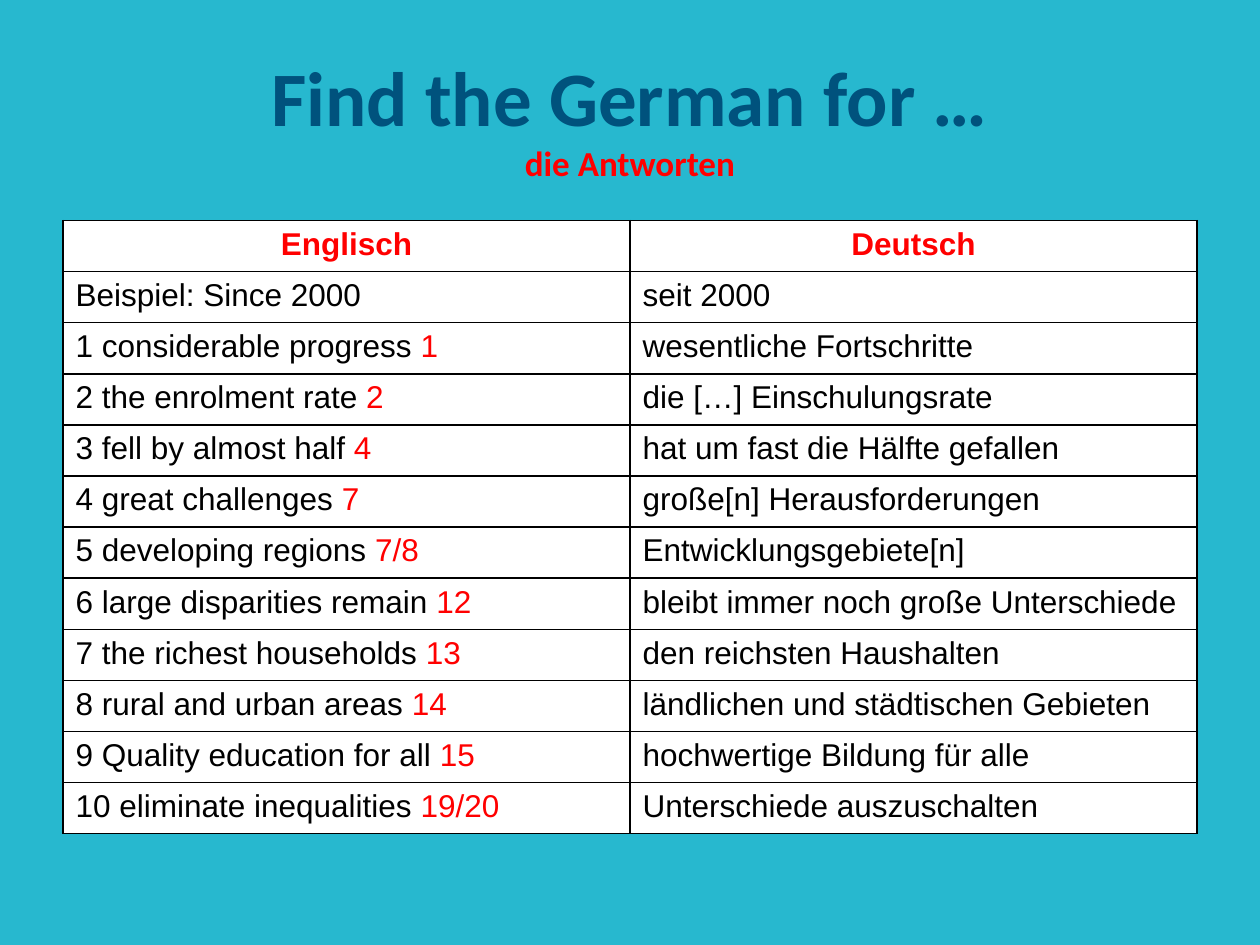
"""Build a vocabulary answer slide with English phrases and their German equivalents."""
import dataclasses

import lxml.etree
import pptx
import pptx.dml.color
import pptx.enum.text
import pptx.oxml.ns
import pptx.util

Inches = pptx.util.Inches
Pt = pptx.util.Pt
CENTER = pptx.enum.text.PP_ALIGN.CENTER
MIDDLE = pptx.enum.text.MSO_ANCHOR.MIDDLE

COLORS = {
    "background": "27B8CF",
    "title": "00527D",
    "answer": "FF0000",
    "text": "000000",
    "border": "000000",
    "cell": "FFFFFF",
}


@dataclasses.dataclass(frozen=True)
class Entry:
    """One phrase pair with the text line where the answer is found."""

    english: str
    german: str
    line: str = ""


HEADINGS = ("Englisch", "Deutsch")
ENTRIES = [
    Entry("Beispiel: Since 2000", "seit 2000"),
    Entry("1 considerable progress", "wesentliche Fortschritte", "1"),
    Entry("2 the enrolment rate", "die […] Einschulungsrate", "2"),
    Entry("3 fell by almost half", "hat um fast die Hälfte gefallen", "4"),
    Entry("4 great challenges", "große[n] Herausforderungen", "7"),
    Entry("5 developing regions", "Entwicklungsgebiete[n]", "7/8"),
    Entry("6 large disparities remain", "bleibt immer noch große Unterschiede", "12"),
    Entry("7 the richest households", "den reichsten Haushalten", "13"),
    Entry("8 rural and urban areas", "ländlichen und städtischen Gebieten", "14"),
    Entry("9 Quality education for all", "hochwertige Bildung für alle", "15"),
    Entry("10 eliminate inequalities", "Unterschiede auszuschalten", "19/20"),
]


def rgb(name: str) -> pptx.dml.color.RGBColor:
    """Return the named palette colour."""
    return pptx.dml.color.RGBColor.from_string(COLORS[name])


def add_run(paragraph, text: str, color: str, size: float | None = None) -> None:
    """Append a coloured run, with its own size if given."""
    run = paragraph.add_run()
    run.text = text
    run.font.color.rgb = rgb(color)
    if size:
        run.font.size = Pt(size)


def style_cell(cell) -> None:
    """Give a cell thin borders on all sides and a plain fill."""
    properties = cell._tc.get_or_add_tcPr()
    qn = pptx.oxml.ns.qn
    for side in ("a:lnL", "a:lnR", "a:lnT", "a:lnB"):
        border = lxml.etree.SubElement(properties, qn(side), w=str(Pt(1)))
        fill = lxml.etree.SubElement(border, qn("a:solidFill"))
        lxml.etree.SubElement(fill, qn("a:srgbClr"), val=COLORS["border"])
    cell.fill.solid()
    cell.fill.fore_color.rgb = rgb("cell")


def write_cell(cell, text: str, color: str = "text", line: str = "", heading: bool = False) -> None:
    """Write a cell's wording followed by its line reference."""
    style_cell(cell)
    paragraph = cell.text_frame.paragraphs[0]
    paragraph.font.name = "Arial"
    paragraph.font.size = Pt(18)
    paragraph.font.bold = heading
    if heading:
        paragraph.alignment = CENTER
    add_run(paragraph, f"{text} " if line else text, color)
    if line:
        add_run(paragraph, line, "answer")


def add_title(slide) -> None:
    """Place and fill the title with its subtitle line."""
    title = slide.shapes.title
    title.left, title.top = Inches(0.5), Inches(0.3)
    title.width, title.height = Inches(9), Inches(1.25)
    title.text_frame.vertical_anchor = MIDDLE
    paragraph = title.text_frame.paragraphs[0]
    paragraph.alignment = CENTER
    paragraph.font.name = "Calibri"
    paragraph.font.bold = True
    add_run(paragraph, "Find the German for …", "title", 44)
    paragraph.add_line_break()
    add_run(paragraph, "die Antworten", "answer", 20)


def add_vocabulary(slide) -> None:
    """Add the two-column vocabulary table."""
    vocabulary = slide.shapes.add_table(
        len(ENTRIES) + 1, len(HEADINGS), Inches(0.5), Inches(1.75), Inches(9), Inches(4.87)
    ).table
    for column, heading in enumerate(HEADINGS):
        write_cell(vocabulary.cell(0, column), heading, "answer", heading=True)
    for row, entry in enumerate(ENTRIES, start=1):
        write_cell(vocabulary.cell(row, 0), entry.english, line=entry.line)
        write_cell(vocabulary.cell(row, 1), entry.german)


def main() -> None:
    """Build and save the presentation."""
    presentation = pptx.Presentation()
    presentation.slide_width, presentation.slide_height = Inches(10), Inches(7.5)
    slide = presentation.slides.add_slide(presentation.slide_layouts.get_by_name("Title Only"))
    slide.background.fill.solid()
    slide.background.fill.fore_color.rgb = rgb("background")
    add_title(slide)
    add_vocabulary(slide)
    presentation.save("out.pptx")


if __name__ == "__main__":
    main()
